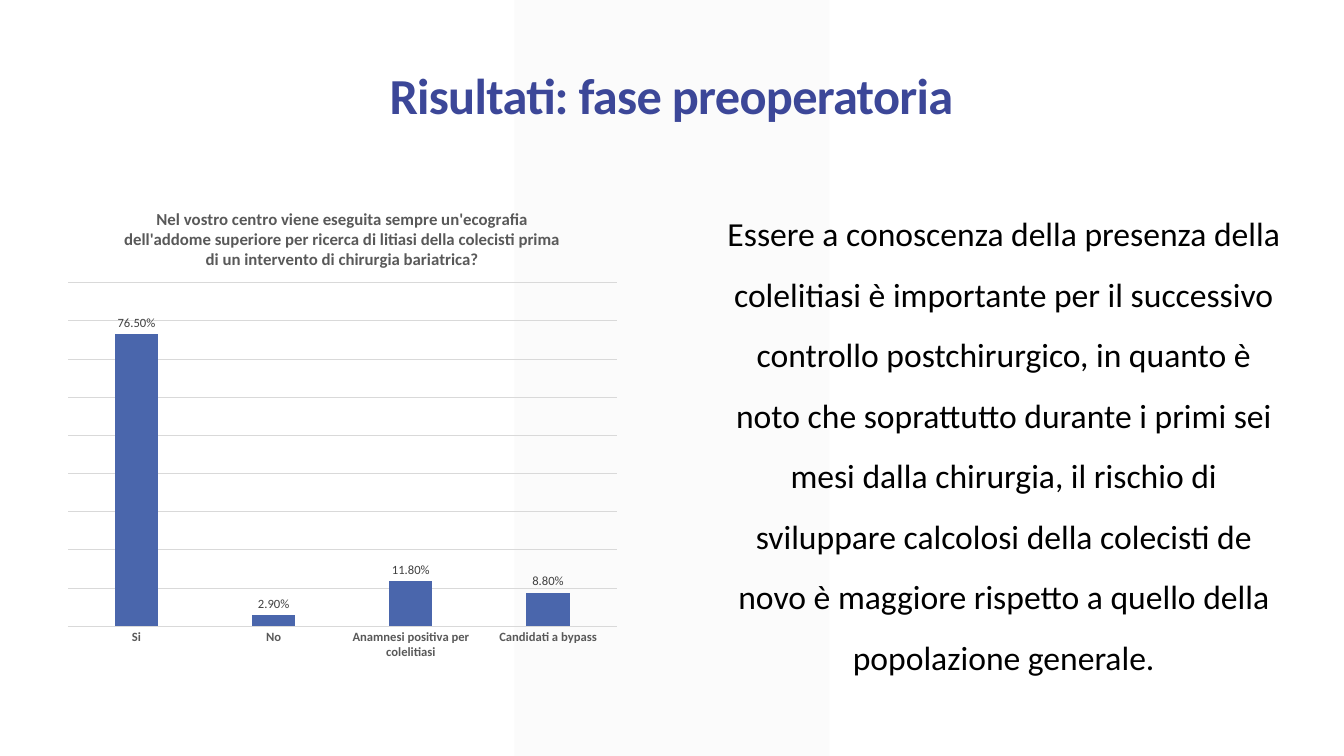
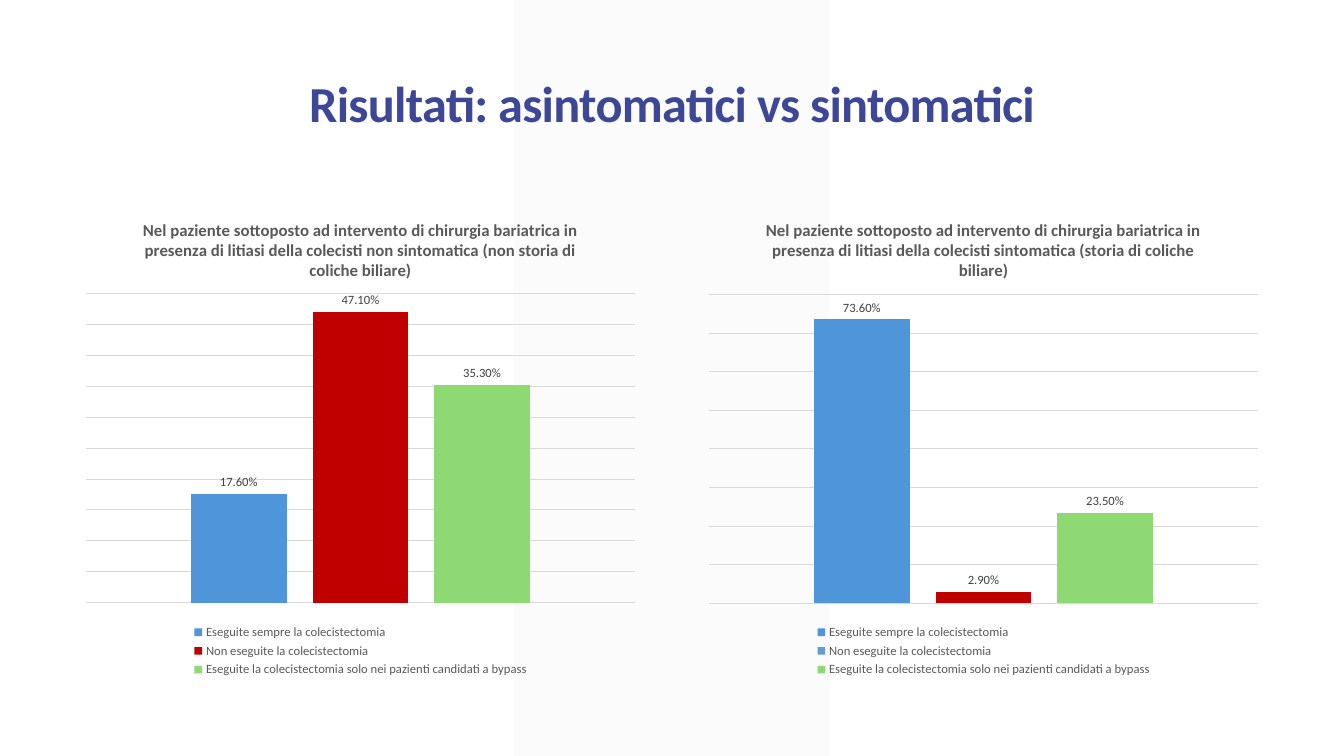
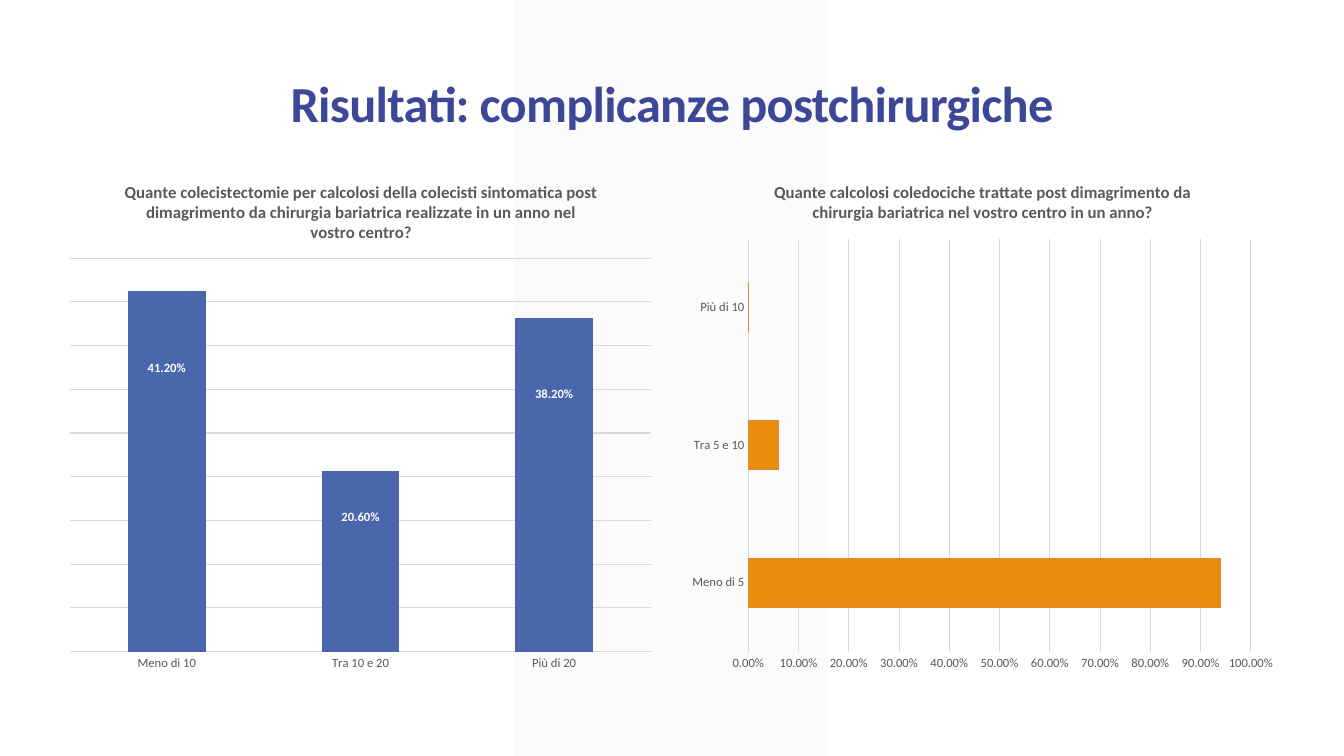
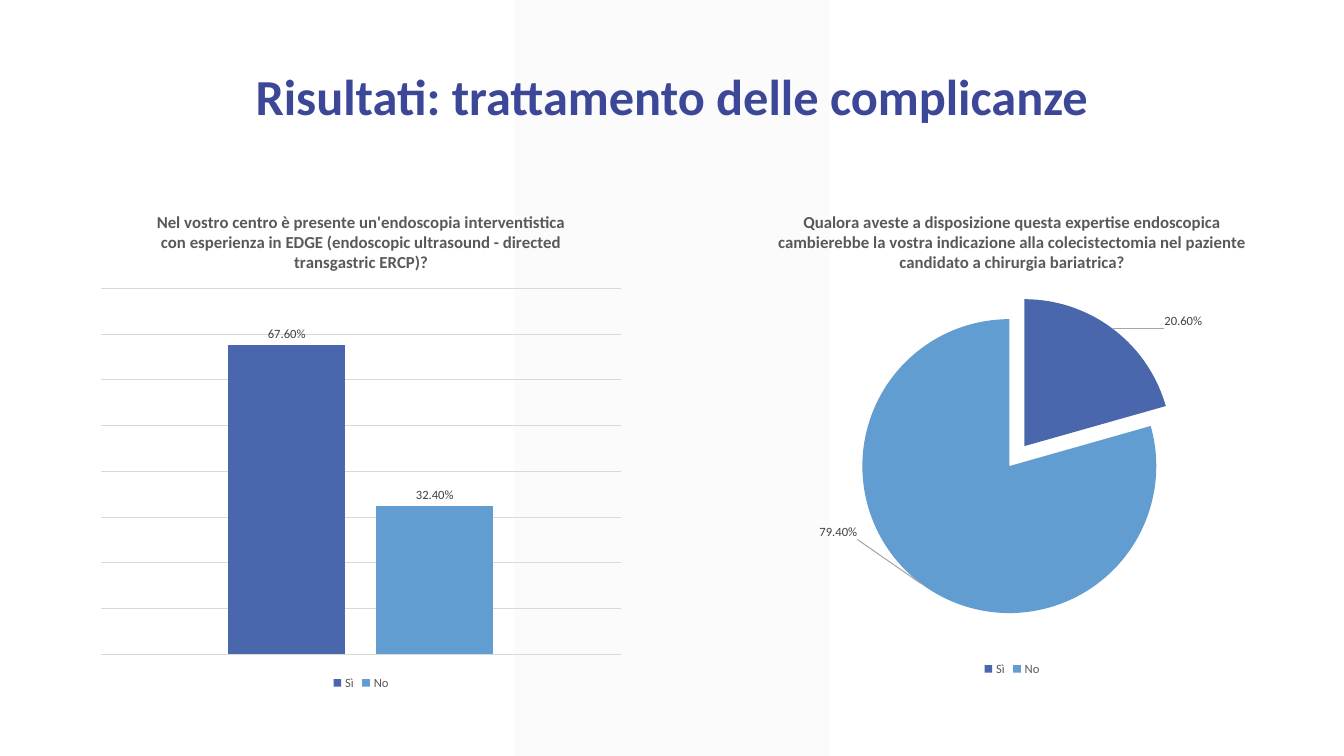
import pptx
import pptx.util
import pptx.dml.color
import pptx.chart.data
import pptx.enum.chart
import pptx.enum.shapes
import pptx.enum.text
import pptx.oxml
import pptx.oxml.ns

Pt = pptx.util.Pt
qn = pptx.oxml.ns.qn
Kind = pptx.enum.chart.XL_CHART_TYPE
Spot = pptx.enum.chart.XL_LABEL_POSITION
Tick = pptx.enum.chart.XL_TICK_MARK

FONT = "Calibri"
RATE = "0.00%"
HUES = {
    "title": "3C4798", "text": "000000", "band": "F2F2F2", "grid": "D9D9D9",
    "grey": "595959", "label": "404040", "lead": "A6A6A6", "white": "FFFFFF",
    "navy": "4A66AC", "blue": "629DD1", "sky": "4E95D9", "red": "C00000",
    "green": "8ED973", "gold": "E98B0D", "rust": "E68637",
}
BAND = (367.5, 0, 225, 540)
LOW = (93, 42, 774, 57)

HABITS = [
    "Eseguite sempre la colecistectomia",
    "Non eseguite la colecistectomia",
    "Eseguite la colecistectomia solo nei pazienti candidati a bypass",
]
GALL = "Nel paziente sottoposto ad intervento di chirurgia bariatrica in presenza di litiasi della colecisti "

SLIDES = [
    {
        "title": "Risultati: fase preoperatoria",
        "box": (74, 47, 811, 40), "top": True, "tight": True,
        "body": "Essere a conoscenza della presenza della colelitiasi è importante per il successivo "
                "controllo postchirurgico, in quanto è noto che soprattutto durante i primi sei mesi "
                "dalla chirurgia, il rischio di sviluppare calcolosi della colecisti de novo è maggiore "
                "rispetto a quello della popolazione generale.",
        "charts": [{
            "title": "Nel vostro centro viene eseguita sempre un'ecografia dell'addome superiore per "
                     "ricerca di litiasi della colecisti prima di un intervento di chirurgia bariatrica?",
            "box": (40.5, 135.5, 408, 343), "plot": (48.5, 202, 392, 245.5),
            "cats": ["Si", "No", "Anamnesi positiva per colelitiasi", "Candidati a bypass"],
            "rows": [("Series 1", [0.765, 0.029, 0.118, 0.088], "navy")],
            "top": 0.9, "step": 0.1, "bold": True, "line": True,
        }],
    },
    {
        "title": "Risultati: asintomatici vs sintomatici", "box": LOW, "tight": True,
        "charts": [
            {
                "title": GALL + "non sintomatica (non storia di coliche biliare)",
                "box": (53.5, 143.5, 408, 343), "plot": (61.5, 210, 392, 220.5),
                "rows": list(zip(HABITS, ([0.176], [0.471], [0.353]), ("sky", "red", "green"))),
                "top": 0.5, "step": 0.05,
            },
            {
                "title": GALL + "sintomatica (storia di coliche biliare)",
                "box": (498.5, 143.5, 408, 343), "plot": (506.5, 210.5, 392, 220.5),
                "rows": list(zip(HABITS, ([0.736], [0.029], [0.235]), ("sky", "blue", "green"))),
                "top": 0.8, "step": 0.1, "spots": {1: ["red"]},
            },
        ],
    },
    {
        "title": "Risultati: complicanze postchirurgiche", "box": LOW, "tight": True,
        "charts": [
            {
                "title": "Quante colecistectomie per calcolosi della colecisti sintomatica post "
                         "dimagrimento da chirurgia bariatrica realizzate in un anno nel vostro centro?",
                "box": (42, 116, 432, 370), "plot": (50, 184.5, 415, 281),
                "cats": ["Meno di 10", "Tra 10 e 20", "Più di 20"],
                "rows": [("Series 1", [0.412, 0.206, 0.382], "navy")],
                "top": 0.45, "step": 0.05, "gap": 150, "lap": 0,
                "tags": {"color": "white", "bold": True},
                "shifts": [(0, 0.17), (0, 0.11), (0, 0.17)],
            },
            {
                "title": "Quante calcolosi coledociche trattate post dimagrimento da chirurgia "
                         "bariatrica nel vostro centro in un anno?",
                "box": (486, 116, 432, 370), "plot": (534.5, 170.5, 359, 295),
                "kind": Kind.BAR_CLUSTERED,
                "cats": ["Meno di 5", "Tra 5 e 10", "Più di 10"],
                "rows": [("Series 1", [0.94, 0.06, 0], "gold")],
                "top": 1, "step": 0.1, "gap": 182, "lap": 0,
                "line": True, "scale": True, "tags": None, "edge": "rust",
            },
        ],
    },
    {
        "title": "Risultati: trattamento delle complicanze", "box": (93, 44, 774, 50),
        "charts": [
            {
                "title": "Qualora aveste a disposizione questa expertise endoscopica cambierebbe la "
                         "vostra indicazione alla colecistectomia nel paziente candidato a chirurgia "
                         "bariatrica?",
                "box": (509, 137.5, 428, 348.5), "plot": (616, 228, 210, 210),
                "kind": Kind.PIE, "cats": ["Sì", "No"],
                "rows": [("Series 1", [0.206, 0.794], "navy")],
                "spots": {0: ["navy", "blue"]}, "burst": 17,
                "shifts": [(0.08, 0.01), (-0.1, -0.13)],
            },
            {
                "title": "Nel vostro centro è presente un'endoscopia interventistica con esperienza in "
                         "EDGE (endoscopic ultrasound - directed transgastric ERCP)?",
                "box": (65, 137.5, 386, 358.5), "plot": (72, 206, 371.5, 261.5),
                "rows": [("Sì", [0.676], "navy"), ("No", [0.324], "blue")],
                "top": 0.8, "step": 0.1,
            },
        ],
    },
]


def rgb(name):
    return pptx.dml.color.RGBColor.from_string(HUES[name])


def make(xml):
    return pptx.oxml.parse_xml(xml.replace(" ", f" {pptx.oxml.ns.nsdecls('c', 'a')} ", 1))


def style(font, size=9, color="grey", bold=False):
    font.name, font.size, font.bold = FONT, Pt(size), bold
    font.color.rgb = rgb(color)


def write(frame, text, lead=None, after=None, **look):
    para = frame.paragraphs[0]
    para.alignment = pptx.enum.text.PP_ALIGN.CENTER
    if lead:
        para.line_spacing = lead
    if after:
        para.space_after = Pt(after)
    run = para.add_run()
    run.text = text
    style(run.font, **look)


def paint(part, color, edge=None):
    part.format.fill.solid()
    part.format.fill.fore_color.rgb = rgb(color)
    if edge:
        part.format.line.color.rgb = rgb(edge)
        part.format.line.width = Pt(0.75)


def rule(line, show=True):
    if show:
        line.color.rgb = rgb("grid")
        line.width = Pt(0.75)
    else:
        line.fill.background()


def axes(chart, spec):
    cat, val = chart.category_axis, chart.value_axis
    val.minimum_scale, val.maximum_scale, val.major_unit = 0, spec["top"], spec["step"]
    val.has_major_gridlines = True
    rule(val.major_gridlines.format.line)
    val.visible, cat.visible = spec.get("scale", False), "cats" in spec
    for axis in (cat, val):
        axis.major_tick_mark = axis.minor_tick_mark = Tick.NONE
    val.tick_labels.number_format = RATE
    val.tick_labels.number_format_is_linked = False
    style(val.tick_labels.font)
    style(cat.tick_labels.font, bold=spec.get("bold", False))
    rule(val.format.line, False)
    rule(cat.format.line, spec.get("line", False))
    plot = chart.plots[0]
    plot.gap_width, plot.overlap = spec.get("gap", 219), spec.get("lap", -27)


def place(chart, spec):
    left, top, wide, high = spec["box"]
    x, y, w, h = spec["plot"]
    parts = {"x": (x - left) / wide, "y": (y - top) / high, "w": w / wide, "h": h / high}
    xml = '<c:layout ><c:manualLayout><c:layoutTarget val="inner"/>'
    xml += '<c:xMode val="edge"/><c:yMode val="edge"/>'
    xml += "".join(f'<c:{key} val="{part:.4f}"/>' for key, part in parts.items())
    area = next(chart.element.iter(qn("c:plotArea")))
    for old in area.findall(qn("c:layout")):
        area.remove(old)
    area.insert(0, make(xml + "</c:manualLayout></c:layout>"))


def label(chart, row, spec):
    look = spec.get("tags", {"color": "label"})
    if look is None:
        return
    tags = row.data_labels
    tags.show_value = True
    tags.number_format, tags.number_format_is_linked = RATE, False
    tags.position = Spot.OUTSIDE_END
    style(tags.font, **look)
    shifts = spec.get("shifts", [])
    for i in range(len(shifts)):
        tag = row.points[i].data_label
        style(tag.font, **look)
        tag.position = Spot.OUTSIDE_END
    for node, (x, y) in zip(list(chart.element.iter(qn("c:dLbl"))), shifts):
        node.insert(1, make(f'<c:layout ><c:manualLayout><c:x val="{x}"/><c:y val="{y}"/>'
                            "</c:manualLayout></c:layout>"))


def leads(chart, show):
    for tags in chart.element.iter(qn("c:dLbls")):
        for old in tags.findall(qn("c:showLeaderLines")):
            tags.remove(old)
        tags.append(make(f'<c:showLeaderLines val="{int(show)}"/>'))
        if show:
            tags.append(make('<c:leaderLines ><c:spPr><a:ln w="9525"><a:solidFill>'
                             f'<a:srgbClr val="{HUES["lead"]}"/>'
                             "</a:solidFill></a:ln></c:spPr></c:leaderLines>"))
        else:
            tags.append(make(
                '<c:extLst ><c:ext uri="{CE6537A1-D6FC-4f65-9D91-7224C49458BB}" '
                'xmlns:c15="http://schemas.microsoft.com/office/drawing/2012/chart">'
                '<c15:showLeaderLines val="0"/></c:ext></c:extLst>'))


def draw(slide, spec):
    data = pptx.chart.data.CategoryChartData(number_format=RATE)
    data.categories = spec.get("cats", ["1"])
    for name, vals, _ in spec["rows"]:
        data.add_series(name, vals)
    kind = spec.get("kind", Kind.COLUMN_CLUSTERED)
    chart = slide.shapes.add_chart(kind, *map(Pt, spec["box"]), data).chart
    style(chart.font, size=10, color="text")
    chart.has_title = True
    write(chart.chart_title.text_frame, spec["title"], size=12, bold=True)
    chart.chart_title.include_in_layout = False
    chart.has_legend = kind == Kind.PIE or len(spec["rows"]) > 1
    if chart.has_legend:
        chart.legend.position = pptx.enum.chart.XL_LEGEND_POSITION.BOTTOM
        chart.legend.include_in_layout = False
        style(chart.legend.font)
    chart.plots[0].vary_by_categories = kind == Kind.PIE
    if kind != Kind.PIE:
        axes(chart, spec)
    for i, (row, (_, _, color)) in enumerate(zip(chart.plots[0].series, spec["rows"])):
        paint(row, color, spec.get("edge"))
        for j, spot in enumerate(spec.get("spots", {}).get(i, [])):
            paint(row.points[j], spot)
        label(chart, row, spec)
    leads(chart, kind == Kind.PIE)
    if "burst" in spec:
        wedge = next(chart.element.iter(qn("c:dPt")))
        wedge.insert(1, make(f'<c:explosion val="{spec["burst"]}"/>'))
    place(chart, spec)


def head(slide, spec):
    shape = slide.shapes.title
    shape.left, shape.top, shape.width, shape.height = map(Pt, spec["box"])
    frame = shape.text_frame
    frame.auto_size = pptx.enum.text.MSO_AUTO_SIZE.NONE
    anchor = pptx.enum.text.MSO_ANCHOR
    frame.vertical_anchor = anchor.TOP if spec.get("top") else anchor.BOTTOM
    write(frame, spec["title"], lead=0.9, size=36, color="title", bold=True)
    if spec.get("tight"):
        next(shape.element.iter(qn("a:rPr"))).set("spc", "-50")


def band(deck, slide):
    shape = slide.shapes.add_shape(pptx.enum.shapes.MSO_SHAPE.PARALLELOGRAM, *map(Pt, BAND))
    shape.adjustments[0] = 0
    shape.shadow.inherit = False
    shape.fill.solid()
    shape.fill.fore_color.rgb = rgb("band")
    shape.line.fill.background()
    next(shape.element.iter(qn("a:srgbClr"))).append(make('<a:alpha val="30000"/>'))
    deck.slide_master.shapes.element.insert(2, shape.element)


def main():
    deck = pptx.Presentation()
    deck.slide_width, deck.slide_height = Pt(960), Pt(540)
    for i, spec in enumerate(SLIDES):
        slide = deck.slides.add_slide(deck.slide_layouts[5])
        if i == 0:
            band(deck, slide)
        head(slide, spec)
        for item in spec["charts"]:
            draw(slide, item)
        if "body" in spec:
            frame = slide.shapes.add_textbox(*map(Pt, (511.5, 134.5, 411, 343))).text_frame
            frame.word_wrap = True
            write(frame, spec["body"], lead=1.5, after=6, size=24, color="text")
    deck.save("out.pptx")


if __name__ == "__main__":
    main()
